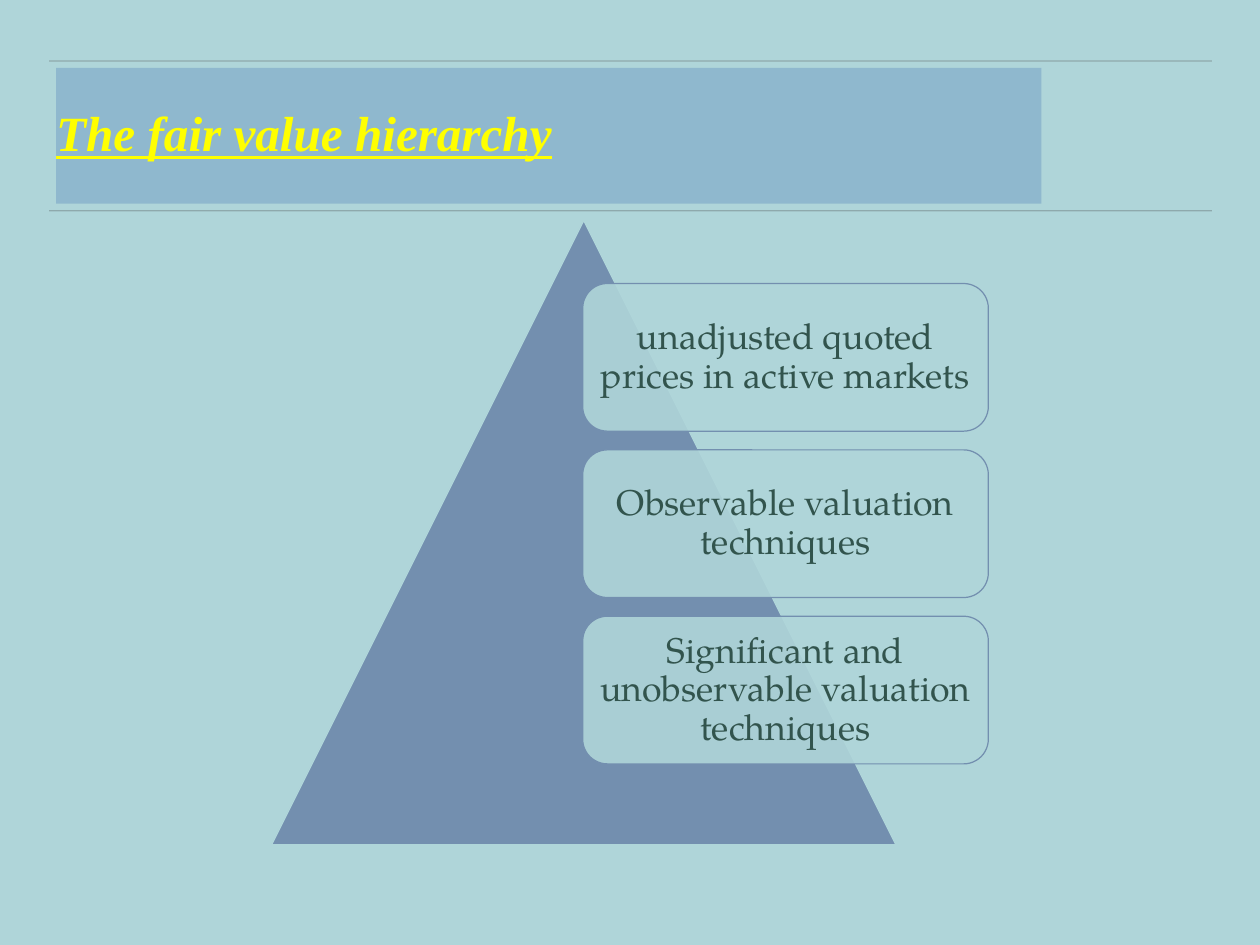
from dataclasses import dataclass

from lxml.etree import SubElement
from pptx import Presentation
from pptx.dml.color import RGBColor
from pptx.enum.shapes import MSO_CONNECTOR as Link, MSO_SHAPE as Kind
from pptx.enum.text import MSO_ANCHOR as Anchor, PP_ALIGN as Align
from pptx.oxml.ns import qn
from pptx.util import Pt

PX = 10160  # EMU in one px, 90 px to the inch
MIST, STEEL, SKY = "AFD5D9", "738FAF", "8FB8CE"
GREY, PINE, YELLOW = "444444", "32544D", "FFFF00"


@dataclass
class Box:
    left: int
    top: int
    width: int
    height: int


def color(code: str) -> RGBColor:
    return RGBColor.from_string(code)


def fade(part, percent: int) -> None:
    """Set the opacity of the first colour in a shape or line."""
    tint = next(part._element.spPr.iter(qn("a:srgbClr")))
    SubElement(tint, qn("a:alpha")).set("val", str(percent * 1000))


def add_shape(kind: Kind, box: Box, fill: str, edge: str | None = None):
    spots = (box.left, box.top, box.width, box.height)
    shape = slide.shapes.add_shape(kind, *(n * PX for n in spots))
    shape.shadow.inherit = False
    shape.fill.solid()
    shape.fill.fore_color.rgb = color(fill)
    if edge:
        shape.line.color.rgb = color(edge)
        shape.line.width = Pt(1)
    else:
        shape.line.fill.background()
    return shape


def add_text(shape, text: str, font: str, size: int, ink: str,
             align: Align, inset: int):
    frame = shape.text_frame
    frame.word_wrap = True
    frame.vertical_anchor = Anchor.MIDDLE
    frame.margin_left = frame.margin_right = inset * PX
    frame.margin_top = frame.margin_bottom = inset * PX
    para = frame.paragraphs[0]
    para.text = text
    para.alignment = align
    para.line_spacing = 0.9
    para.font.name = font
    para.font.size = Pt(size)
    para.font.color.rgb = color(ink)
    return para


def add_rule(top: int) -> None:
    rule = slide.shapes.add_connector(
        Link.STRAIGHT, 50 * PX, top * PX, 1231 * PX, top * PX)
    rule.line.color.rgb = color(GREY)
    rule.line.width = Pt(1)
    fade(rule, 30)
    SubElement(rule._element.spPr, qn("a:effectLst"))


# Slide and background
deck = Presentation()
deck.slide_width, deck.slide_height = 1280 * PX, 960 * PX
slide = deck.slides.add_slide(deck.slide_layouts[6])
slide.background.fill.solid()
slide.background.fill.fore_color.rgb = color(MIST)

# Title band between two rules
for top in (214, 62):
    add_rule(top)
band = add_shape(Kind.RECTANGLE, Box(57, 69, 1001, 138), SKY)
title = add_text(band, "The fair value hierarchy", "Times New Roman", 40,
                 YELLOW, Align.LEFT, 0)
title.font.bold = title.font.italic = title.font.underline = True

# Pyramid with one card for each level
add_shape(Kind.ISOSCELES_TRIANGLE, Box(276, 224, 634, 634), STEEL, MIST)
levels = (
    "unadjusted quoted prices in active markets",
    "Observable valuation techniques",
    "Significant and unobservable valuation techniques",
)
for row, level in enumerate(levels):
    card = add_shape(Kind.ROUNDED_RECTANGLE,
                     Box(592, 288 + 169 * row, 412, 150), MIST, STEEL)
    fade(card, 90)
    add_text(card, level, "TeX Gyre Pagella", 29, PINE, Align.CENTER, 10)

deck.save("out.pptx")
